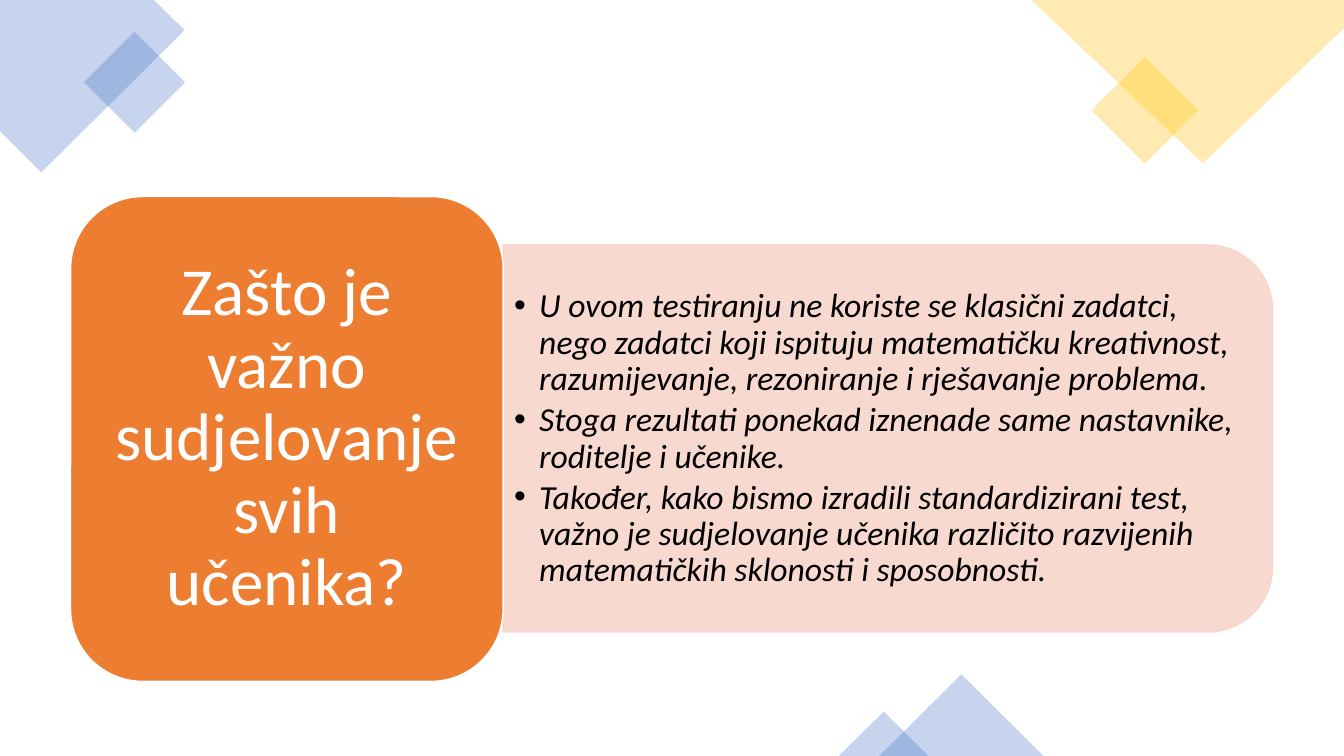
import pptx
import pptx.util
import pptx.dml.color
import pptx.enum.shapes
import pptx.enum.text
import pptx.oxml
import pptx.oxml.ns
from pptx.util import Inches

SHAPES = pptx.enum.shapes.MSO_SHAPE
BLUE, YELLOW, ORANGE, PINK = "4472C4", "FFC000", "ED7D31", "F7D5CB"
WHITE, BLACK = "FFFFFF", "000000"
QUESTION = "Zašto je važno sudjelovanje svih učenika?"
REASONS = [
    "U ovom testiranju ne koriste se klasični zadatci, nego zadatci koji ispituju "
    "matematičku kreativnost, razumijevanje, rezoniranje i rješavanje problema.",
    "Stoga rezultati ponekad iznenade same nastavnike, roditelje i učenike.",
    "Također, kako bismo izradili standardizirani test, važno je sudjelovanje učenika "
    "različito razvijenih matematičkih sklonosti i sposobnosti.",
]


def color(hex_code):
    return pptx.dml.color.RGBColor.from_string(hex_code)


def element(tag, **attributes):
    node = pptx.oxml.parse_xml(f"<a:{tag} {pptx.oxml.ns.nsdecls('a')}/>")
    for key, value in attributes.items():
        node.set(key, str(value))
    return node


def paint(shape, fill, opacity=100, outline=None):
    shape.shadow.inherit = False
    shape.fill.solid()
    shape.fill.fore_color.rgb = color(fill)
    if outline:
        shape.line.color.rgb = color(outline)
        shape.line.width = pptx.util.Pt(1)
    else:
        shape.line.fill.background()
    if opacity < 100:
        for tint in shape._element.spPr.iter(pptx.oxml.ns.qn("a:srgbClr")):
            tint.append(element("alpha", val=opacity * 1000))


def add_preset(slide, preset, box):
    return slide.shapes.add_shape(preset, *map(Inches, box))


def add_polygon(slide, points, fill):
    start, *rest = [(Inches(x), Inches(y)) for x, y in points]
    builder = slide.shapes.build_freeform(*start)
    builder.add_line_segments(rest, close=True)
    paint(builder.convert_to_shape(), fill, 30)


def add_corner(slide, outline, square, fill):
    add_polygon(slide, outline, fill)
    left, top, side = square
    tilted = add_preset(slide, SHAPES.RECTANGLE, (left, top, side, side))
    tilted.rotation = 315
    paint(tilted, fill, 30)


def add_peaks(slide, bottom, peaks):
    for left, width, height in peaks:
        peak = add_preset(slide, SHAPES.ISOSCELES_TRIANGLE, (left, bottom - height, width, height))
        paint(peak, BLUE, 30)


def style_frame(frame, margin_x, margin_y):
    frame.word_wrap = True
    frame.auto_size = pptx.enum.text.MSO_AUTO_SIZE.NONE
    frame.vertical_anchor = pptx.enum.text.MSO_ANCHOR.MIDDLE
    frame.margin_left = frame.margin_right = Inches(margin_x)
    frame.margin_top = frame.margin_bottom = Inches(margin_y)


def style_paragraph(paragraph, size, ink):
    paragraph.line_spacing = 0.9
    paragraph.font.name = "Calibri"
    paragraph.font.size = pptx.util.Pt(size)
    paragraph.font.color.rgb = color(ink)


def add_reasons(slide, left, top, width, height):
    panel = add_preset(
        slide, SHAPES.ROUND_2_SAME_RECTANGLE,
        (left + (width - height) / 2, top + (height - width) / 2, height, width))
    panel.rotation = 90
    panel.adjustments[0] = 0.167
    paint(panel, PINK, 90, PINK)

    text_box = slide.shapes.add_textbox(
        Inches(left + 0.01), Inches(top + 0.19), Inches(width - 0.19), Inches(height - 0.37))
    frame = text_box.text_frame
    style_frame(frame, 0.1, 0.05)
    frame.text = "\n".join(REASONS)
    for index, paragraph in enumerate(frame.paragraphs):
        style_paragraph(paragraph, 24, BLACK)
        paragraph.font.italic = True
        paragraph.space_before = pptx.util.Pt(3.6 if index else 0)
        properties = paragraph._p.get_or_add_pPr()
        properties.set("marL", str(Inches(0.25)))
        properties.set("indent", str(Inches(-0.25)))
        bullet_font = element("buFont", typeface="Arial")
        properties.find(pptx.oxml.ns.qn("a:defRPr")).addprevious(bullet_font)
        bullet_font.addnext(element("buChar", char="•"))


def add_question(slide, left, top, width, height):
    card = add_preset(slide, SHAPES.ROUNDED_RECTANGLE, (left, top, width, height))
    card.adjustments[0] = 0.167
    paint(card, ORANGE, outline=WHITE)

    inset = 0.21
    title = slide.shapes.title
    title.left, title.top = Inches(left + inset), Inches(top + inset)
    title.width, title.height = Inches(width - 2 * inset), Inches(height - 2 * inset)
    card._element.addnext(title._element)
    style_frame(title.text_frame, 0.2, 0.1)
    title.text_frame.text = QUESTION
    paragraph = title.text_frame.paragraphs[0]
    paragraph.alignment = pptx.enum.text.PP_ALIGN.CENTER
    style_paragraph(paragraph, 48, WHITE)


def main():
    deck = pptx.Presentation()
    deck.slide_width, deck.slide_height = Inches(13.33), Inches(7.5)
    slide = deck.slides.add_slide(deck.slide_layouts.get_by_name("Title Only"))
    add_corner(slide, [(1.53, 0), (0, 0), (0, 1.3), (0.41, 1.71), (1.83, 0.3)],
               (0.98, 0.46, 0.71), BLUE)
    add_corner(slide, [(13.33, 0), (10.23, 0), (11.93, 1.62), (13.33, 0.28)],
               (10.98, 0.72, 0.75), YELLOW)
    add_peaks(slide, 7.5, [(8.72, 1.63, 0.81), (8.32, 0.89, 0.44)])
    add_reasons(slide, 4.99, 2.43, 7.63, 3.84)
    add_question(slide, 0.7, 1.95, 4.29, 4.81)
    deck.save("out.pptx")


if __name__ == "__main__":
    main()
